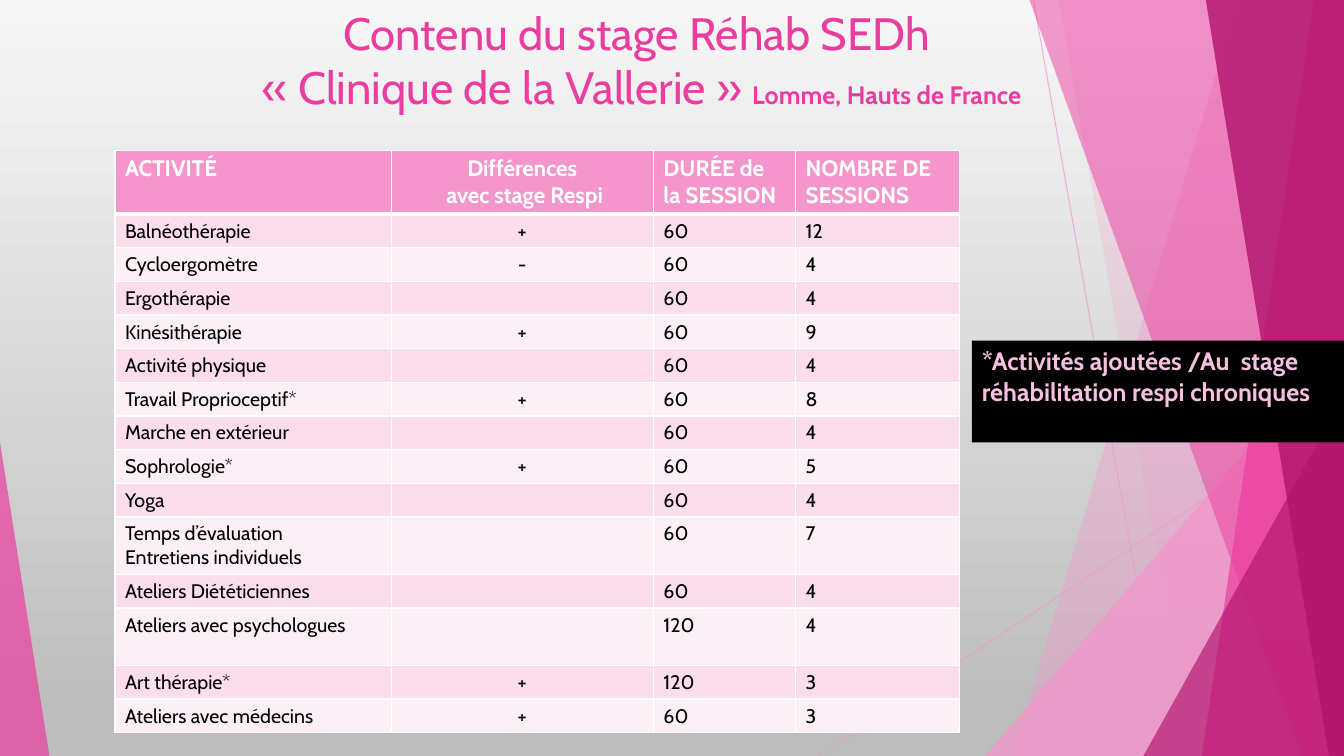
from dataclasses import dataclass

from lxml import etree
from pptx import Presentation, util as u
from pptx.dml.color import RGBColor
from pptx.enum import shapes, text
from pptx.oxml import ns


@dataclass(frozen=True)
class Theme:
    font: str = "Cabin"
    rose: str = "F496CB"
    pink: str = "EB3D9F"
    plum: str = "B2136D"
    band_dark: str = "FBDDEC"
    band_light: str = "FDEFF6"
    note: str = "F8C0E0"
    white: str = "FFFFFF"
    black: str = "000000"
    sky: tuple = (("F7F7F7", 0), ("BDBDBD", 0.94))
    title: float = 32.4
    place: float = 18
    header: float = 16
    body: float = 14


THEME = Theme()
WIDTH, HEIGHT = 13.33, 7.5

TITLE = "Contenu du stage Réhab SEDh\v «\u00a0Clinique de la Vallerie\u00a0» "
PLACE = "Lomme, Hauts de France"
NOTE = "*Activités ajoutées /Au  stage réhabilitation respi chroniques"

HEADER = ("ACTIVITÉ", "Différences\n avec stage Respi",
          "DURÉE de la SESSION", "NOMBRE DE SESSIONS")
ACTIVITIES = [
    ("Balnéothérapie", "+", 60, 12),
    ("Cycloergomètre", "-", 60, 4),
    ("Ergothérapie", "", 60, 4),
    ("Kinésithérapie", "+", 60, 9),
    ("Activité physique", "", 60, 4),
    ("Travail Proprioceptif*", "+", 60, 8),
    ("Marche en extérieur", "", 60, 4),
    ("Sophrologie*", "+", 60, 5),
    ("Yoga", "", 60, 4),
    ("Temps d’évaluation\nEntretiens individuels", "", 60, 7),
    ("Ateliers Diététiciennes", "", 60, 4),
    ("Ateliers avec psychologues", "", 120, 4),
    ("Art thérapie*", "+", 120, 3),
    ("Ateliers avec médecins", "+", 60, 3),
]
COLUMNS = (2.74, 2.6, 1.41, 1.63)
SINGLE_ROW, DOUBLE_ROW = 0.32, 0.57
DOUBLE_ROWS = (0, 10, 12)
DIFFERENCE = 1

RAYS = [((10.25, 0), (11.58, HEIGHT)), ((WIDTH, 4.03), (8.12, HEIGHT))]
# Bands run to the right edge: x at top, x at bottom, colour, opacity.
# Wedges: left, top, width, apex side, colour, opacity.
DECOR = [
    ("band", (12.28, 10.04, THEME.rose, 36)),
    ("band", (10.5, 11.83, THEME.rose, 20)),
    ("wedge", (9.77, 3.33, 3.56, 1, THEME.rose, 72)),
    ("band", (10.21, 12.91, THEME.pink, 50)),
    ("band", (13.03, 11.92, THEME.pink, 70)),
    ("band", (11.96, 13.18, THEME.plum, 80)),
    ("wedge", (11.34, 3.93, 1.99, 1, THEME.plum, 66)),
    ("wedge", (0, 4.39, 0.49, 0, THEME.pink, 70)),
]


def inches(*lengths):
    return [u.Inches(length) for length in lengths]


def color(code):
    return RGBColor.from_string(code)


def set_opacity(part, percent):
    for srgb in part.iter(ns.qn("a:srgbClr")):
        etree.SubElement(srgb, ns.qn("a:alpha"), val=str(percent * 1000))


def paint(shape, code, opacity=None):
    shape.shadow.inherit = False
    shape.fill.solid()
    shape.fill.fore_color.rgb = color(code)
    shape.line.fill.background()
    if opacity is not None:
        set_opacity(shape._element.spPr, opacity)


def style(run, size, code, bold=False):
    run.font.name, run.font.size, run.font.bold = THEME.font, u.Pt(size), bold
    run.font.color.rgb = color(code)


def draw_background(slide):
    fill = slide.background.fill
    fill.gradient()
    fill.gradient_angle = 270
    for stop, (code, position) in zip(fill.gradient_stops, THEME.sky):
        stop.color.rgb = color(code)
        stop.position = position


def draw_ray(slide, start, end):
    ray = slide.shapes.add_connector(
        shapes.MSO_CONNECTOR.STRAIGHT, *inches(*start, *end))
    ray.line.color.rgb = color(THEME.rose)
    ray.line.width = u.Pt(0.75)
    set_opacity(ray._element.spPr, 70)
    etree.SubElement(ray._element.spPr, ns.qn("a:effectLst"))


def draw_band(slide, top_x, bottom_x, code, opacity):
    outline = slide.shapes.build_freeform(*inches(top_x, 0), scale=1.0)
    corners = [(WIDTH, 0), (WIDTH, HEIGHT), (bottom_x, HEIGHT)]
    outline.add_line_segments([inches(*corner) for corner in corners])
    paint(outline.convert_to_shape(), code, opacity)


def draw_wedge(slide, left, top, width, apex, code, opacity):
    wedge = slide.shapes.add_shape(
        shapes.MSO_SHAPE.ISOSCELES_TRIANGLE,
        *inches(left, top, width, HEIGHT - top))
    wedge.adjustments[0] = apex
    paint(wedge, code, opacity)


def draw_title(slide):
    frame = slide.shapes.add_textbox(*inches(0, 0, 12.63, 1.53)).text_frame
    frame.word_wrap = True
    heading = frame.paragraphs[0]
    heading.text = TITLE
    heading.alignment = text.PP_ALIGN.CENTER
    for run in heading.runs:
        style(run, THEME.title, THEME.pink)
    place = heading.add_run()
    place.text = PLACE
    style(place, THEME.place, THEME.pink, bold=True)


def set_borders(cell, bottom):
    widths = {"lnL": 1, "lnR": 1, "lnT": 1, "lnB": bottom}
    properties = cell._tc.get_or_add_tcPr()
    for position, (side, width) in enumerate(widths.items()):
        border = etree.Element(ns.qn(f"a:{side}"), w=str(u.Pt(width)))
        fill = etree.SubElement(border, ns.qn("a:solidFill"))
        etree.SubElement(fill, ns.qn("a:srgbClr"), val=THEME.white)
        properties.insert(position, border)


def fill_cell(cell, value, row, column):
    is_header = row == 0
    size = THEME.header if is_header else THEME.body
    band = THEME.band_dark if row % 2 else THEME.band_light
    cell.fill.solid()
    cell.fill.fore_color.rgb = color(THEME.rose if is_header else band)
    set_borders(cell, bottom=3 if is_header else 1)
    cell.text_frame.text = str(value)
    for line in cell.text_frame.paragraphs:
        if column == DIFFERENCE:
            line.alignment = text.PP_ALIGN.CENTER
        for run in line.runs:
            style(run, size, THEME.white if is_header else THEME.black, is_header)
        if not line.runs:  # keeps an empty cell from stretching its row
            etree.SubElement(line._p, ns.qn("a:endParaRPr"), sz=str(size * 100))


def draw_activities(slide):
    rows = [HEADER, *ACTIVITIES]
    heights = [DOUBLE_ROW if row in DOUBLE_ROWS else SINGLE_ROW
               for row in range(len(rows))]
    table = slide.shapes.add_table(
        len(rows), len(COLUMNS),
        *inches(1.14, 1.49, sum(COLUMNS), sum(heights))).table
    for column, width in enumerate(COLUMNS):
        table.columns[column].width = u.Inches(width)
    for row, values in enumerate(rows):
        table.rows[row].height = u.Inches(heights[row])
        for column, value in enumerate(values):
            fill_cell(table.cell(row, column), value, row, column)


def draw_note(slide):
    note = slide.shapes.add_shape(
        shapes.MSO_SHAPE.RECTANGLE, *inches(9.64, 3.38, 3.77, 1.01))
    paint(note, THEME.black)
    frame = note.text_frame
    frame.word_wrap = True
    frame.vertical_anchor = text.MSO_ANCHOR.TOP
    frame.text = NOTE
    frame.paragraphs[0].alignment = text.PP_ALIGN.LEFT
    style(frame.paragraphs[0].runs[0], THEME.place, THEME.note, bold=True)


def main():
    deck = Presentation()
    deck.slide_width, deck.slide_height = inches(WIDTH, HEIGHT)
    slide = deck.slides.add_slide(deck.slide_layouts[6])
    draw_background(slide)
    for start, end in RAYS:
        draw_ray(slide, start, end)
    draw = {"band": draw_band, "wedge": draw_wedge}
    for kind, values in DECOR:
        draw[kind](slide, *values)
    draw_title(slide)
    draw_activities(slide)
    draw_note(slide)
    deck.save("out.pptx")


if __name__ == "__main__":
    main()
